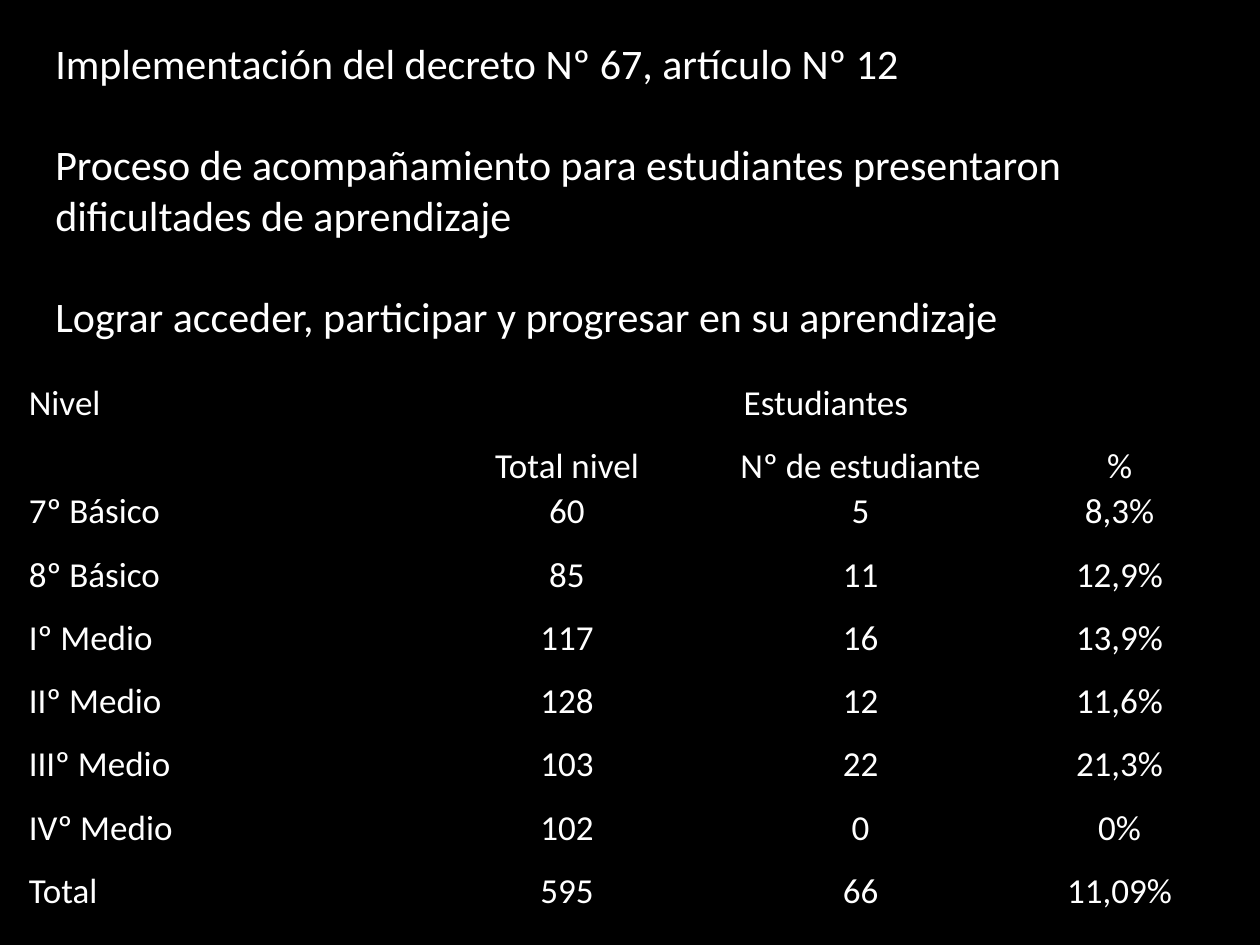
from pptx import Presentation, util as u
from pptx.dml.color import RGBColor
from pptx.enum import text
from pptx.oxml import parse_xml
from pptx.oxml.ns import nsdecls

BLACK = RGBColor(0, 0, 0)
WHITE = RGBColor(255, 255, 255)

GOALS = [
    "Implementación del decreto Nº 67, artículo Nº 12",
    "Proceso de acompañamiento para estudiantes presentaron dificultades de aprendizaje",
    "Lograr acceder, participar y progresar en su aprendizaje",
]
LEVELS = [
    ("Nivel", "Estudiantes", "", ""),
    ("", "Total nivel", "Nº de estudiante", "%"),
    ("7º Básico", "60", "5", "8,3%"),
    ("8º Básico", "85", "11", "12,9%"),
    ("Iº Medio", "117", "16", "13,9%"),
    ("IIº Medio", "128", "12", "11,6%"),
    ("IIIº Medio", "103", "22", "21,3%"),
    ("IVº Medio", "102", "0", "0%"),
    ("Total", "595", "66", "11,09%"),
]
COLUMN_WIDTHS = [223.2, 178.6, 157, 139]
ROW_HEIGHTS = [36, 25.2, 36.7, 36, 36, 36, 36.7, 36, 36]


class Slide:
    font_name = "Calibri"
    color = WHITE

    def __init__(self, deck):
        self.page = deck.slides.add_slide(deck.slide_layouts[6])
        fill = self.page.background.fill
        fill.solid()
        fill.fore_color.rgb = BLACK

    def style(self, para, size):
        para.font.name = self.font_name
        para.font.size = u.Pt(size)
        para.font.color.rgb = self.color

    def text_box(self, left, top, width, height, lines, size, gap):
        box = self.page.shapes.add_textbox(*map(u.Pt, (left, top, width, height)))
        frame = box.text_frame
        frame.word_wrap = True
        frame.auto_size = text.MSO_AUTO_SIZE.SHAPE_TO_FIT_TEXT
        for index, line in enumerate(lines):
            para = frame.add_paragraph() if index else frame.paragraphs[0]
            para.text = line
            if index:
                para.space_before = u.Pt(gap)
            self.style(para, size)

    def table(self, left, top, widths, heights, rows, size, merges):
        frame = self.page.shapes.add_table(
            len(heights), len(widths),
            *map(u.Pt, (left, top, sum(widths), sum(heights))))
        table = frame.table
        table.first_row = table.horz_banding = False
        for column, width in zip(table.columns, widths):
            column.width = u.Pt(width)
        for row, height in zip(table.rows, heights):
            row.height = u.Pt(height)
        for first, last in merges:
            table.cell(*first).merge(table.cell(*last))
        for row, values in enumerate(rows):
            for column, value in enumerate(values):
                self.cell(table.cell(row, column), value, size, column > 0)

    def cell(self, cell, value, size, centred):
        cell.margin_left = cell.margin_right = u.Pt(5)
        cell.margin_top = cell.margin_bottom = 0
        self.borders(cell, 1)
        cell.fill.background()
        para = cell.text_frame.paragraphs[0]
        para.text = value
        para.line_spacing = 1.07
        para.space_after = u.Pt(8)
        if centred:
            para.alignment = text.PP_ALIGN.CENTER
        self.style(para, size)

    def borders(self, cell, width):
        properties = cell._tc.get_or_add_tcPr()
        for side in "LRTB":
            properties.append(parse_xml(
                f'<a:ln{side} {nsdecls("a")} w="{u.Pt(width)}"><a:solidFill>'
                f'<a:srgbClr val="{BLACK}"/></a:solidFill></a:ln{side}>'))


def main():
    deck = Presentation()
    deck.slide_width, deck.slide_height = u.Pt(720), u.Pt(540)
    slide = Slide(deck)
    slide.text_box(24.5, 18, 671, 181.4, GOALS, size=24, gap=29)
    slide.table(11.5, 216.7, COLUMN_WIDTHS, ROW_HEIGHTS, LEVELS, size=20,
                merges=[((0, 0), (1, 0)), ((0, 1), (0, 3))])
    deck.save("out.pptx")


if __name__ == "__main__":
    main()
